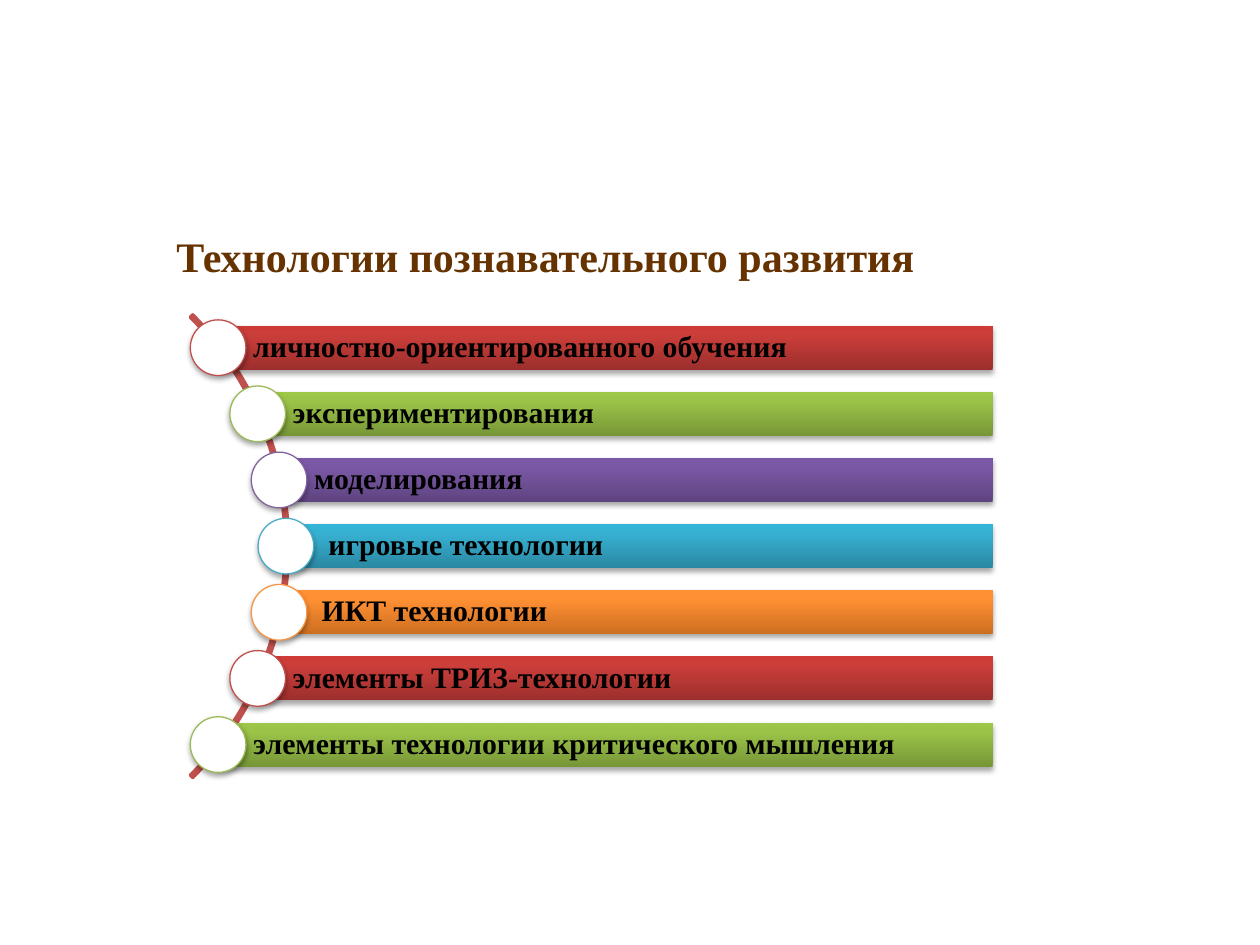
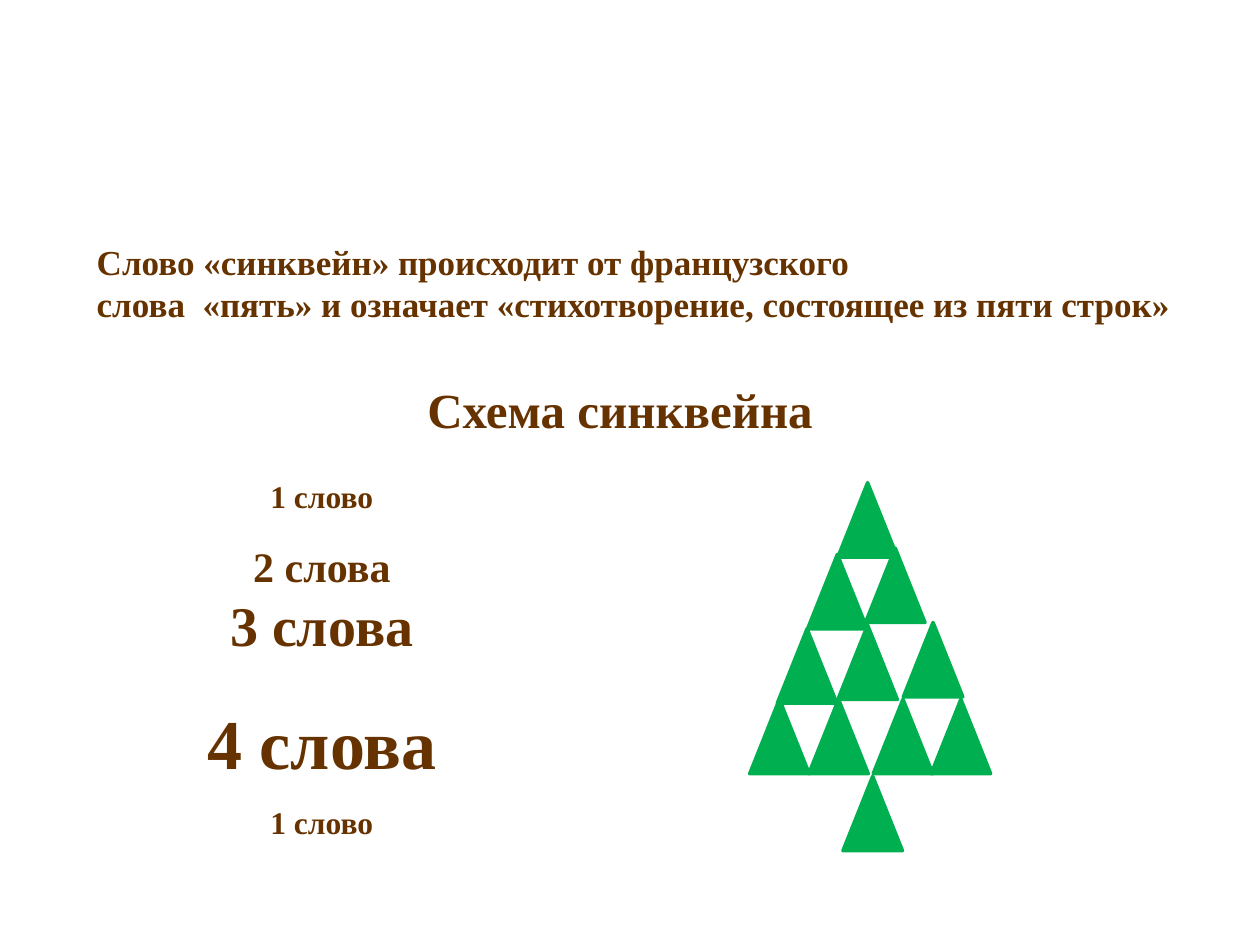
from dataclasses import dataclass
from math import sqrt

from lxml import etree
from pptx import Presentation
from pptx.dml.color import RGBColor
from pptx.enum.shapes import MSO_SHAPE
from pptx.enum.text import MSO_ANCHOR, MSO_AUTO_SIZE, PP_ALIGN
from pptx.oxml import parse_xml
from pptx.oxml.ns import nsdecls, qn
from pptx.util import Pt

ARC, RECT = MSO_SHAPE.BLOCK_ARC, MSO_SHAPE.RECTANGLE
OVAL, TRIANGLE = MSO_SHAPE.OVAL, MSO_SHAPE.ISOSCELES_TRIANGLE
TOP, MIDDLE = MSO_ANCHOR.TOP, MSO_ANCHOR.MIDDLE
LEFT, CENTER = PP_ALIGN.LEFT, PP_ALIGN.CENTER
FIXED = MSO_AUTO_SIZE.NONE


@dataclass(frozen=True)
class Theme:
    face: str = "Times New Roman"
    brown: str = "663300"
    black: str = "000000"
    white: str = "FFFFFF"
    green: str = "00B050"
    arc: str = "C0504D"
    # ring colour, then the bar's gradient from bottom to top
    bars: tuple = (
        ("C0504D", "9C2F2D", "CB3E3A", "CE3B37"),
        ("9BBB59", "779737", "9BC348", "9DC746"),
        ("8064A2", "5F4480", "7B58A6", "7C57A8"),
        ("4BACC6", "2A88A2", "37B1D2", "34B4D6"),
        ("F79646", "CC6E20", "FF9034", "FF9136"),
    )
    head: int = 24
    scheme: int = 28
    bar: int = 17
    note: int = 20


THEME = Theme()

ITEMS = (
    "личностно-ориентированного обучения",
    "экспериментирования",
    "моделирования",
    " игровые технологии",
    " ИКТ технологии",
    "элементы ТРИЗ-технологии",
    "элементы технологии критического мышления",
)

# text, size, line spacing
VERSE = (
    ("1 слово", 18, 1.5),
    ("2 слова", 24, 1.5),
    ("3 слова", 32, 1.0),
    ("4 слова", 40, 1.5),
    ("1 слово", 18, 1.5),
)

# left and top of each triangle inside the tree
TREE = (
    (50.4, 0),
    (33.1, 41), (66.2, 37.4),
    (15.8, 83.5), (50.4, 81.4), (87.8, 79.9),
    (0, 123.8), (33.8, 123.8), (70.6, 123.8), (103.7, 123.8),
    (53.3, 167.8),
)


def rgb(code):
    return RGBColor.from_string(code)


def style(para, size, color=THEME.brown, align=LEFT, space=1.0):
    para.alignment = align
    para.line_spacing = space
    font = para.font
    font.name, font.size, font.bold = THEME.face, Pt(size), True
    font.color.rgb = rgb(color)


def place(shape, box):
    shape.left, shape.top, shape.width, shape.height = map(Pt, box)


def add_title(slide, text, box, size, align):
    title = slide.shapes.title
    place(title, box)
    frame = title.text_frame
    frame.text = text
    frame.auto_size, frame.vertical_anchor = FIXED, TOP
    style(frame.paragraphs[0], size, align=align)


def add_text(slide, box, lines, align):
    frame = slide.shapes.add_textbox(*map(Pt, box)).text_frame
    frame.word_wrap = True
    for i, (text, size, space) in enumerate(lines):
        para = frame.add_paragraph() if i else frame.paragraphs[0]
        para.text = text
        style(para, size, align=align, space=space)


def add_part(slide, kind, box, fill=None, line=None, width=2):
    part = slide.shapes.add_shape(kind, *map(Pt, box))
    part.shadow.inherit = False
    if fill:
        part.fill.solid()
        part.fill.fore_color.rgb = rgb(fill)
    else:
        part.fill.background()
    if line:
        part.line.color.rgb = rgb(line)
        part.line.width = Pt(width)
    else:
        part.line.fill.background()
    return part


def add_shadow(part):
    effects = part._element.spPr.find(qn("a:effectLst"))
    shadow = etree.SubElement(
        effects, qn("a:outerShdw"), blurRad=str(Pt(3.1)), dist=str(Pt(1.8)),
        dir="5400000", rotWithShape="0")
    color = etree.SubElement(shadow, qn("a:srgbClr"), val=THEME.black)
    etree.SubElement(color, qn("a:alpha"), val="35000")


def add_blend(part, colors):
    stops = "".join(
        f'<a:gs pos="{pos}000"><a:srgbClr val="{color}"/></a:gs>'
        for pos, color in zip((0, 80, 100), colors))
    blend = parse_xml(
        f'<a:gradFill {nsdecls("a")} rotWithShape="1"><a:gsLst>{stops}</a:gsLst>'
        '<a:lin ang="16200000" scaled="0"/></a:gradFill>')
    props = part._element.spPr
    props.replace(props.find(qn("a:noFill")), blend)


def add_bar(slide, text, box, colors):
    bar = add_part(slide, RECT, box)
    add_blend(bar, colors)
    add_shadow(bar)
    frame = bar.text_frame
    frame.margin_left = Pt(20)
    frame.margin_top = frame.margin_right = frame.margin_bottom = Pt(3.6)
    frame.vertical_anchor = MIDDLE
    frame.text = text
    style(frame.paragraphs[0], THEME.bar, THEME.black, space=0.9)


def add_list(slide, box):
    """Bars whose left ends and rings follow an arc."""
    left, top, width, height = box
    mid = top + height / 2
    size, reach, hub = 373.8, 185.4, left - 130.7
    high, ring, step = 25.2, 31.8, 37.8

    # Arc behind the rings
    arc = add_part(slide, ARC, (hub - size / 2, mid - size / 2, size, size),
                   line=THEME.arc)
    for i, value in enumerate((189, 27, 0.005)):
        arc.adjustments[i] = value

    # Bars and rings
    for i, text in enumerate(ITEMS):
        shift = (i - (len(ITEMS) - 1) / 2) * step
        x, y = hub + sqrt(reach ** 2 - shift ** 2), mid + shift
        edge, *colors = THEME.bars[i % len(THEME.bars)]
        add_bar(slide, text, (x, y - high / 2, left + width - x, high), colors)
        dot = add_part(slide, OVAL, (x - ring / 2, y - ring / 2, ring, ring),
                       THEME.white, edge, 0.75)
        add_shadow(dot)


def add_tree(slide, left, top):
    for x, y in TREE:
        add_part(slide, TRIANGLE, (left + x, top + y, 34, 42.5),
                 THEME.green, THEME.green)


def tech_slide(slide):
    add_title(slide, "Технологии познавательного развития",
              (93.6, 128.2, 465, 36), THEME.head, LEFT)
    add_list(slide, (108.7, 180, 458.5, 264.2))


def verse_slide(slide):
    add_title(slide, "Схема синквейна",
              (178.6, 213, 351.4, 41), THEME.scheme, CENTER)
    add_text(slide, (82, 258.5, 203.8, 227.5), VERSE, CENTER)
    add_tree(slide, 428.4, 275.8)
    note = ("Слово «синквейн» происходит от французского\v"
            "слова  «пять» и означает «стихотворение, состоящее из пяти строк»")
    add_text(slide, (48.2, 134, 649.4, 55.4), ((note, THEME.note, 1.0),), LEFT)


def main():
    deck = Presentation()
    deck.slide_width, deck.slide_height = Pt(720), Pt(540)
    for build in (tech_slide, verse_slide):
        build(deck.slides.add_slide(deck.slide_layouts[5]))
    deck.save("out.pptx")


if __name__ == "__main__":
    main()
